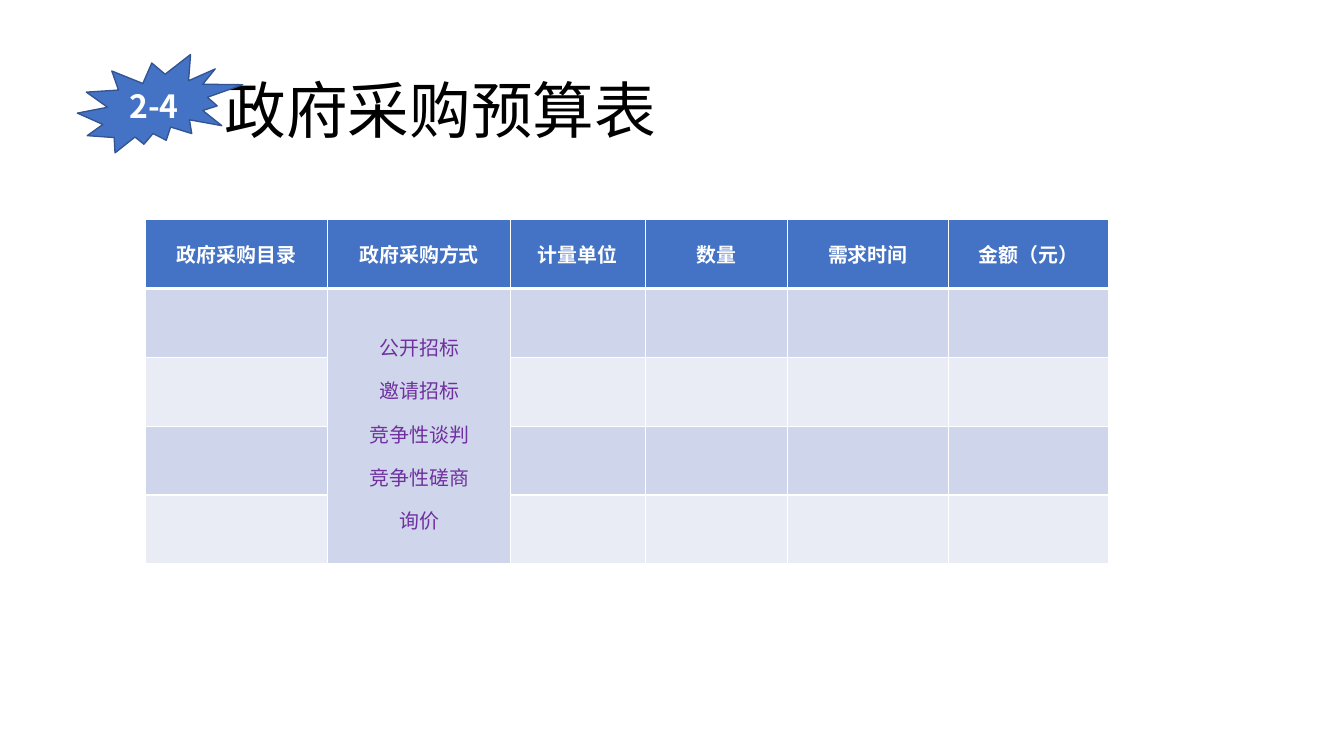
from lxml import etree
from pptx import Presentation
from pptx.dml.color import RGBColor
from pptx.enum import shapes, text
from pptx.oxml.ns import qn
from pptx.util import Inches, Pt

TITLE = "政府采购预算表"
NUMBER = "2-4"
HEADINGS = ["政府采购目录", "政府采购方式", "计量单位", "数量", "需求时间", "金额（元）"]
METHODS = ["公开招标", "邀请招标", "竞争性谈判", "竞争性磋商", "询价"]
COLUMN_WIDTHS = [1.91, 1.91, 1.41, 1.49, 1.68, 1.68]
BODY_ROWS = 4
METHOD_COLUMN = 1
ROW_HEIGHT = 0.72
COLORS = {"blue": "4472C4", "outline": "325491", "odd": "CFD5EA", "even": "E9EBF5",
          "purple": "7030A0", "white": "FFFFFF", "black": "000000"}


def rgb(name):
    return RGBColor.from_string(COLORS[name])


def write(frame, lines, size, color, font="Noto Sans CJK SC", bold=False,
          align=text.PP_ALIGN.CENTER, spacing=1.0):
    for number, line in enumerate(lines):
        paragraph = frame.add_paragraph() if number else frame.paragraphs[0]
        paragraph.alignment = align
        paragraph.line_spacing = spacing
        run = paragraph.add_run()
        run.text = line
        run.font.size = Pt(size)
        run.font.bold = bold
        run.font.color.rgb = rgb(color)
        run.font.name = font
        etree.SubElement(run.font._element, qn("a:ea"), typeface=font)


def add_borders(cell, top=1, bottom=1):
    properties = cell._tc.get_or_add_tcPr()
    widths = {"a:lnL": 1, "a:lnR": 1, "a:lnT": top, "a:lnB": bottom}
    for position, (side, width) in enumerate(widths.items()):
        border = etree.Element(qn(side), w=str(Pt(width)))
        fill = etree.SubElement(border, qn("a:solidFill"))
        etree.SubElement(fill, qn("a:srgbClr"), val=COLORS["white"])
        properties.insert(position, border)


def add_title(slide):
    title = slide.shapes.title
    title.left, title.top = Inches(0.97), Inches(0.42)
    title.width, title.height = Inches(12.13), Inches(1.53)
    frame = title.text_frame
    frame.auto_size = text.MSO_AUTO_SIZE.NONE
    frame.vertical_anchor = text.MSO_ANCHOR.MIDDLE
    frame.margin_left = Inches(1.38)
    write(frame, [TITLE], 46.4, "black", font="Noto Sans CJK JP",
          align=text.PP_ALIGN.LEFT, spacing=0.9)


def add_badge(slide):
    badge = slide.shapes.add_shape(shapes.MSO_SHAPE.EXPLOSION2, Inches(0.81), Inches(0.57),
                                   Inches(1.73), Inches(1.03))
    badge.shadow.inherit = False
    badge.fill.solid()
    badge.fill.fore_color.rgb = rgb("blue")
    badge.line.color.rgb = rgb("outline")
    badge.line.width = Pt(1)
    badge.text_frame.vertical_anchor = text.MSO_ANCHOR.MIDDLE
    write(badge.text_frame, [NUMBER], 24, "white", bold=True)


def add_budget(slide):
    rows = BODY_ROWS + 1
    budget = slide.shapes.add_table(rows, len(HEADINGS), Inches(1.52), Inches(2.3),
                                    Inches(sum(COLUMN_WIDTHS)),
                                    Inches(ROW_HEIGHT * rows)).table
    for column, width in zip(budget.columns, COLUMN_WIDTHS):
        column.width = Inches(width)
    for r in range(rows):
        budget.rows[r].height = Inches(ROW_HEIGHT)
        for c, heading in enumerate(HEADINGS):
            cell = budget.cell(r, c)
            cell.vertical_anchor = text.MSO_ANCHOR.MIDDLE
            cell.fill.solid()
            cell.fill.fore_color.rgb = rgb("blue" if r == 0 else "odd" if r % 2 else "even")
            add_borders(cell, top=3 if r == 1 else 1, bottom=3 if r == 0 else 1)
            if r == 0:
                write(cell.text_frame, [heading], 15, "white", bold=True)
    methods = budget.cell(1, METHOD_COLUMN)
    methods.merge(budget.cell(BODY_ROWS, METHOD_COLUMN))
    write(methods.text_frame, METHODS, 15, "purple", spacing=1.5)


def main():
    deck = Presentation()
    deck.slide_width, deck.slide_height = Inches(14.06), Inches(7.91)
    slide = deck.slides.add_slide(deck.slide_layouts[5])
    add_title(slide)
    add_badge(slide)
    add_budget(slide)
    deck.save("out.pptx")


if __name__ == "__main__":
    main()
